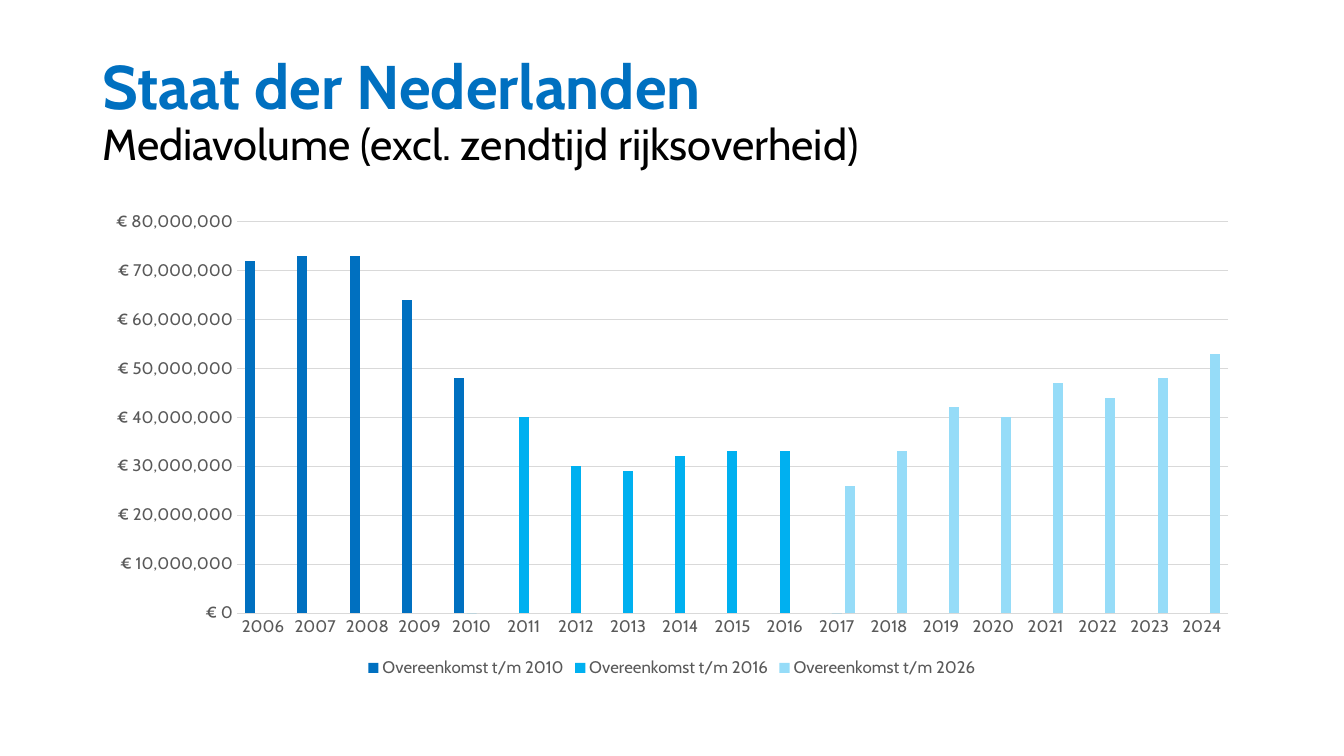
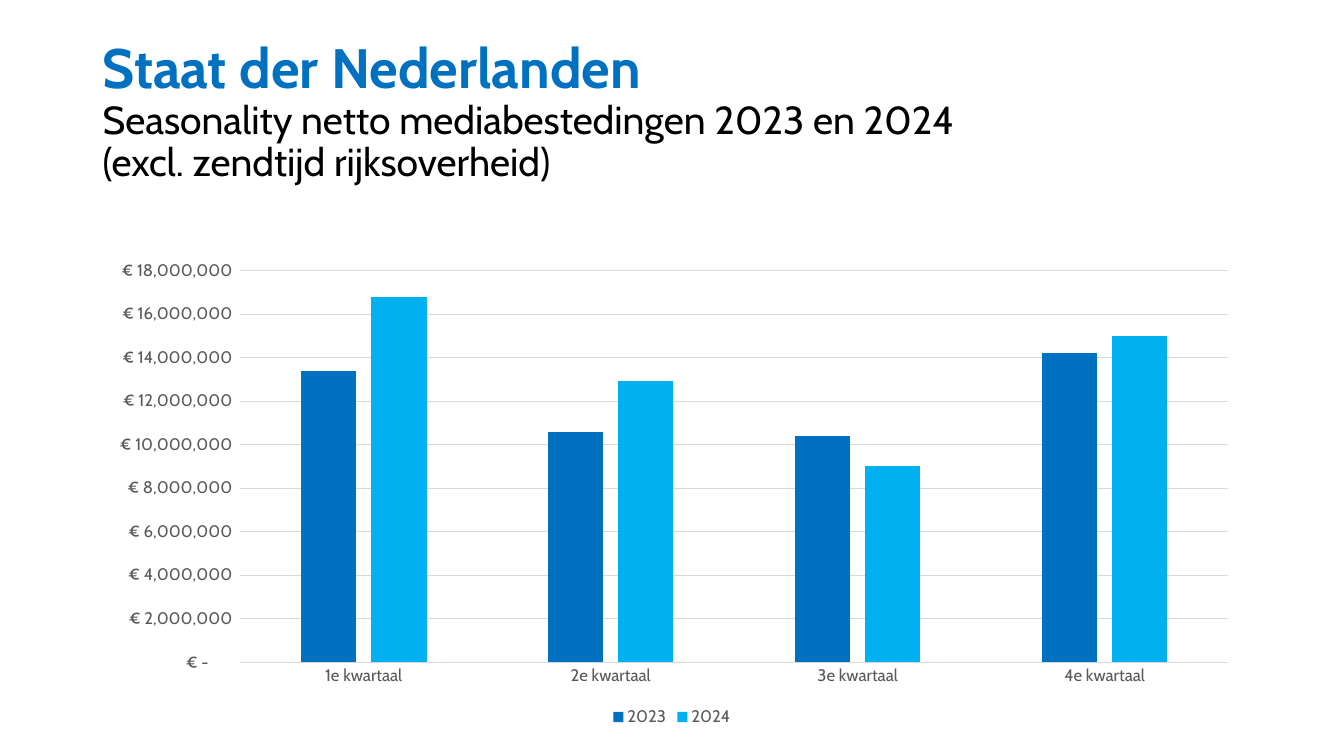
from pptx import Presentation
from pptx.chart.data import CategoryChartData
from pptx.dml.color import RGBColor
from pptx.enum.chart import XL_CHART_TYPE, XL_LEGEND_POSITION, XL_TICK_MARK
from pptx.enum.text import MSO_ANCHOR
from pptx.util import Inches, Pt

CLUSTERED = XL_CHART_TYPE.COLUMN_CLUSTERED
LEGEND_BOTTOM = XL_LEGEND_POSITION.BOTTOM
NO_TICK = XL_TICK_MARK.NONE
MIDDLE = MSO_ANCHOR.MIDDLE

BLUE = RGBColor(0x00, 0x70, 0xC0)
CYAN = RGBColor(0x00, 0xB0, 0xF0)
PALE_BLUE = RGBColor(0x96, 0xDC, 0xF8)
BLACK = RGBColor(0x00, 0x00, 0x00)
GREY = RGBColor(0x59, 0x59, 0x59)
GRID_GREY = RGBColor(0xD9, 0xD9, 0xD9)
SERIES_COLOURS = [BLUE, CYAN, PALE_BLUE]
FONT = "Cabin"

SLIDE_WIDTH, SLIDE_HEIGHT = Inches(13.33), Inches(7.5)
MARGIN = int(SLIDE_WIDTH * 0.069)
CONTENT_WIDTH = SLIDE_WIDTH - 2 * MARGIN
TITLE_TOP = int(SLIDE_HEIGHT * 0.053)
TITLE_HEIGHT = int(SLIDE_HEIGHT * 0.193)
CHART_HEIGHT = int(SLIDE_HEIGHT * 0.635)

MILLION = 1_000_000
YEARS = [str(year) for year in range(2006, 2025)]

# Series values are in millions of euros; None leaves a column out.
SLIDES = [
    {
        "subtitle": "Mediavolume (excl. zendtijd rijksoverheid)",
        "sizes": (44, 31),
        "chart_top": 0.267,
        "categories": YEARS,
        "series": {
            "Overeenkomst t/m 2010": [72, 73, 73, 64, 48] + [None] * 14,
            "Overeenkomst t/m 2016":
                [None] * 4 + [0, 40, 30, 29, 32, 33, 33, 0] + [None] * 7,
            "Overeenkomst t/m 2026":
                [None] * 11 + [26, 33, 42, 40, 47, 44, 48, 53],
        },
        "gap": 167,
        "axis_maximum": 80,
        "axis_step": 10,
        "number_format": r'"€ "#,##0;[Red]"€ "#,##0\-',
    },
    {
        "subtitle": "Seasonality netto mediabestedingen 2023 en 2024\v"
                    "(excl. zendtijd rijksoverheid)",
        "sizes": (39.6, 27.9),
        "chart_top": 0.332,
        "categories": [f"{quarter}e kwartaal" for quarter in range(1, 5)],
        "series": {
            "2023": [13.4, 10.6, 10.4, 14.2],
            "2024": [16.8, 12.9, 9, 15],
        },
        "gap": 219,
        "axis_maximum": 18,
        "axis_step": 2,
        "number_format":
            r'_ "€"\ * #,##0_ ;_ "€"\ * \-#,##0_ ;_ "€"\ * "-"??_ ;_ @_ ',
    },
]


def style_font(font, size, colour, bold=False):
    font.name = FONT
    font.size = Pt(size)
    font.color.rgb = colour
    font.bold = bold


def style_line(line):
    line.color.rgb = GRID_GREY
    line.width = Pt(0.75)


presentation = Presentation()
presentation.slide_width = SLIDE_WIDTH
presentation.slide_height = SLIDE_HEIGHT
blank_layout = presentation.slide_layouts[6]

for content in SLIDES:
    slide = presentation.slides.add_slide(blank_layout)

    # Title and subtitle
    title = slide.shapes.add_textbox(MARGIN, TITLE_TOP, CONTENT_WIDTH, TITLE_HEIGHT)
    text_frame = title.text_frame
    text_frame.word_wrap = True
    text_frame.vertical_anchor = MIDDLE
    paragraph = text_frame.paragraphs[0]
    paragraph.text = "Staat der Nederlanden\v" + content["subtitle"]
    paragraph.line_spacing = 0.9
    title_size, subtitle_size = content["sizes"]
    title_run, *subtitle_runs = paragraph.runs
    style_font(title_run.font, title_size, BLUE, bold=True)
    for run in subtitle_runs:
        style_font(run.font, subtitle_size, BLACK)

    # Column chart
    chart_data = CategoryChartData()
    chart_data.categories = content["categories"]
    for name, values in content["series"].items():
        chart_data.add_series(
            name, [None if value is None else round(value * MILLION) for value in values]
        )
    chart = slide.shapes.add_chart(
        CLUSTERED, MARGIN, int(SLIDE_HEIGHT * content["chart_top"]),
        CONTENT_WIDTH, CHART_HEIGHT, chart_data,
    ).chart
    style_font(chart.font, 12, GREY)
    chart.has_title = False
    chart.has_legend = True
    chart.legend.position = LEGEND_BOTTOM
    chart.legend.include_in_layout = False
    style_font(chart.legend.font, 12, GREY)

    plot = chart.plots[0]
    plot.gap_width = content["gap"]
    plot.overlap = -27
    plot.vary_by_categories = False
    for series, colour in zip(plot.series, SERIES_COLOURS):
        series.invert_if_negative = False
        series.format.fill.solid()
        series.format.fill.fore_color.rgb = colour

    for axis in (chart.category_axis, chart.value_axis):
        axis.major_tick_mark = NO_TICK
        axis.minor_tick_mark = NO_TICK
        style_font(axis.tick_labels.font, 12, GREY)
    style_line(chart.category_axis.format.line)

    value_axis = chart.value_axis
    value_axis.format.line.fill.background()
    value_axis.has_major_gridlines = True
    style_line(value_axis.major_gridlines.format.line)
    value_axis.minimum_scale = 0
    value_axis.maximum_scale = content["axis_maximum"] * MILLION
    value_axis.major_unit = content["axis_step"] * MILLION
    value_axis.tick_labels.number_format = content["number_format"]
    value_axis.tick_labels.number_format_is_linked = False

presentation.save("out.pptx")
